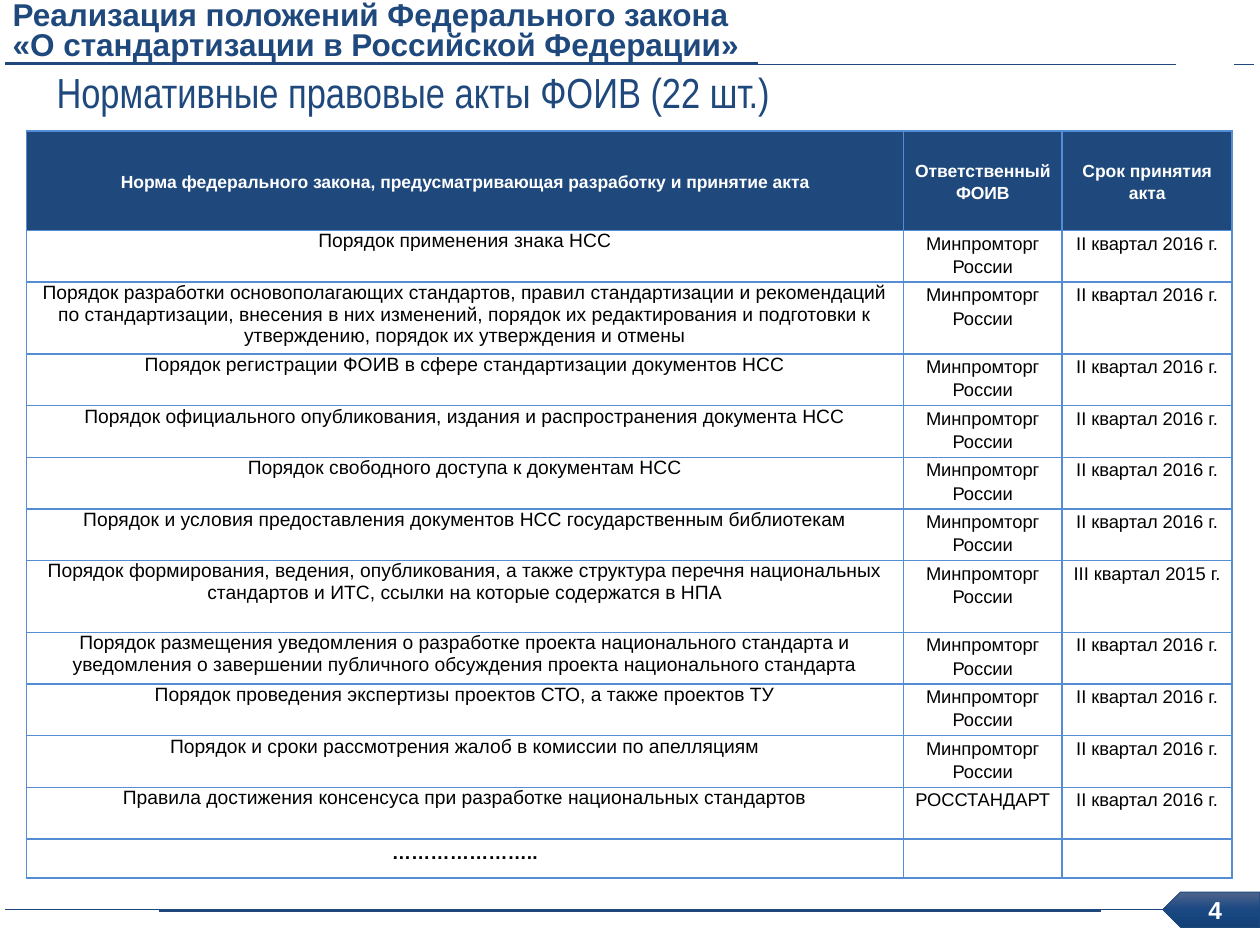
from copy import deepcopy

from pptx import Presentation
from pptx.dml.color import RGBColor
from pptx.enum.shapes import MSO_CONNECTOR, MSO_SHAPE
from pptx.enum.text import MSO_ANCHOR, MSO_AUTO_SIZE, PP_ALIGN
from pptx.oxml import parse_xml
from pptx.oxml.ns import nsdecls, qn
from pptx.oxml.xmlchemy import OxmlElement
from pptx.util import Inches, Pt

NAVY, GRID, WHITE, BLACK = "1F497D", "548DD4", "FFFFFF", "000000"
MINISTRY, QUARTER = "Минпромторг России", "II квартал 2016 г."
COLUMNS = [6.96, 1.26, 1.35]
HEADER_ROW, SHORT_ROW, TALL_ROW, LAST_ROW = 0.79, 0.41, 0.57, 0.31

HEADINGS = ["Норма федерального закона, предусматривающая разработку и принятие акта",
            "Ответственный ФОИВ", "Срок принятия акта"]
# Acts: text, row height, and any owner or date that is not the usual one
ACTS = [
    ("Порядок применения знака НСС", SHORT_ROW),
    ("Порядок разработки основополагающих стандартов, правил стандартизации и рекомендаций "
     "по стандартизации, внесения в них изменений, порядок их редактирования и подготовки к "
     "утверждению, порядок их утверждения и отмены", TALL_ROW),
    ("Порядок регистрации ФОИВ в сфере стандартизации документов НСС", SHORT_ROW),
    ("Порядок официального опубликования, издания и распространения документа НСС", SHORT_ROW),
    ("Порядок свободного доступа к документам НСС", SHORT_ROW),
    ("Порядок и условия предоставления документов НСС государственным библиотекам", SHORT_ROW),
    ("Порядок формирования, ведения, опубликования, а также структура перечня национальных "
     "стандартов и ИТС, ссылки на которые содержатся в НПА", TALL_ROW,
     MINISTRY, "III квартал 2015 г."),
    ("Порядок размещения уведомления о разработке проекта национального стандарта и "
     "уведомления о завершении публичного обсуждения проекта национального стандарта", SHORT_ROW),
    ("Порядок проведения экспертизы проектов СТО, а также проектов ТУ", SHORT_ROW),
    ("Порядок и сроки рассмотрения жалоб в комиссии по апелляциям", SHORT_ROW),
    ("Правила достижения консенсуса при разработке национальных стандартов", SHORT_ROW,
     "РОССТАНДАРТ"),
    ("…………………..", LAST_ROW, "", ""),
]


def color(value):
    return RGBColor.from_string(value)


def set_font(paragraph, size, value, bold=False, name="Arial"):
    font = paragraph.font
    font.name, font.size, font.bold = name, Pt(size), bold
    font.color.rgb = color(value)


def place(shape, box):
    shape.left, shape.top, shape.width, shape.height = (Inches(length) for length in box)


def add_rule(slide, left, right, y, width):
    rule = slide.shapes.add_connector(MSO_CONNECTOR.STRAIGHT, Inches(left), Inches(y),
                                      Inches(right), Inches(y))
    rule.line.color.rgb = color(NAVY)
    rule.line.width = Pt(width)
    rule._element.spPr.append(OxmlElement("a:effectLst"))


def add_text(slide, box, text):
    shape = slide.shapes.add_textbox(*(Inches(length) for length in box))
    shape.text_frame.word_wrap = True
    shape.text_frame.text = text
    return shape.text_frame


def add_header(slide, box):
    left, top, width, height = box
    bottom = top + height
    add_rule(slide, left + 0.04, left + 9.33, bottom, 0.5)
    add_rule(slide, left + 0.04, left + 6.02, bottom - 0.01, 1.5)
    add_rule(slide, left + 9.79, left + 9.95, bottom, 0.5)
    title = slide.shapes.title
    place(title, box)
    frame = title.text_frame
    frame.text = "Реализация положений Федерального закона\v«О стандартизации в Российской Федерации»"
    frame.vertical_anchor = MSO_ANCHOR.MIDDLE
    frame.auto_size = MSO_AUTO_SIZE.NONE
    paragraph = frame.paragraphs[0]
    paragraph.alignment = PP_ALIGN.LEFT
    paragraph.line_spacing = 0.8
    set_font(paragraph, 18, NAVY, bold=True)


def add_subtitle(slide, box):
    frame = add_text(slide, box, "Нормативные правовые акты ФОИВ (22 шт.)")
    frame.auto_size = MSO_AUTO_SIZE.SHAPE_TO_FIT_TEXT
    set_font(frame.paragraphs[0], 24, NAVY, name="Arial Narrow")


def add_borders(cell):
    properties = cell._tc.get_or_add_tcPr()
    for index, side in enumerate(("lnL", "lnR", "lnT", "lnB")):
        properties.insert(index, parse_xml(
            f'<a:{side} {nsdecls("a")} w="12700"><a:solidFill><a:srgbClr val="{GRID}"/>'
            f'</a:solidFill></a:{side}>'))


def fill_cell(cell, text, size, value=BLACK, bold=False, spacing=1.15, after=10, fill=None):
    cell.margin_left = cell.margin_right = Inches(0.04)
    cell.margin_top = cell.margin_bottom = 0
    cell.text = text
    paragraph = cell.text_frame.paragraphs[0]
    paragraph.alignment = PP_ALIGN.CENTER
    paragraph.line_spacing = spacing
    paragraph.space_after = Pt(after)
    set_font(paragraph, size, value, bold)
    if fill:
        cell.fill.solid()
        cell.fill.fore_color.rgb = color(fill)
    else:
        cell.fill.background()
    add_borders(cell)


def add_acts_table(slide, box):
    table = slide.shapes.add_table(len(ACTS) + 1, len(COLUMNS),
                                   *(Inches(length) for length in box)).table
    table.horz_banding = False
    for column, width in zip(table.columns, COLUMNS):
        column.width = Inches(width)
    # Heading row
    table.rows[0].height = Inches(HEADER_ROW)
    for cell, heading in zip(table.rows[0].cells, HEADINGS):
        fill_cell(cell, heading, 10, WHITE, bold=True, fill=NAVY)
        cell.vertical_anchor = MSO_ANCHOR.MIDDLE
    # One row for each act
    for row, (act, height, *details) in enumerate(ACTS, start=1):
        table.rows[row].height = Inches(height)
        is_last = row == len(ACTS)
        fill_cell(table.cell(row, 0), act, 11, bold=is_last,
                  spacing=1.15 if is_last else 1.0, after=0)
        usual = [MINISTRY, QUARTER]
        for column, text in enumerate(details + usual[len(details):], start=1):
            fill_cell(table.cell(row, column), text, 10.5, after=10 if text else 0)


def add_footer(slide, box):
    left, top, width, height = box
    middle = top + height / 2
    add_rule(slide, left + 0.04, left + 9.96, middle, 0.5)
    add_rule(slide, left + 1.26, left + 8.74, middle + 0.01, 1.5)
    # Arrow tab with the page number
    tab = (left + width - 0.77, top, 0.77, height)
    arrow = slide.shapes.add_shape(MSO_SHAPE.PENTAGON, *(Inches(length) for length in tab))
    arrow.shadow.inherit = False
    arrow._element.spPr.find(qn("a:xfrm")).set("flipH", "1")
    arrow.line.color.rgb = color(NAVY)
    arrow.line.width = Pt(0.5)
    arrow.fill.gradient()
    arrow.fill.gradient_angle = 270
    stop_list = arrow._element.spPr.find(qn("a:gradFill")).find(qn("a:gsLst"))
    stop_list.append(deepcopy(stop_list[-1]))
    shades = [(0, "4F648D"), (0.5, "1A4882"), (1, "134077")]
    for stop, (position, value) in zip(arrow.fill.gradient_stops, shades):
        stop.position = position
        stop.color.rgb = color(value)
    frame = add_text(slide, tab, "4")
    frame.margin_right = Inches(0.04)
    frame.vertical_anchor = MSO_ANCHOR.MIDDLE
    frame.paragraphs[0].alignment = PP_ALIGN.CENTER
    set_font(frame.paragraphs[0], 14, WHITE, bold=True)


def main():
    presentation = Presentation()
    presentation.slide_width, presentation.slide_height = Inches(10), Inches(7.5)
    slide = presentation.slides.add_slide(presentation.slide_layouts[5])
    add_header(slide, (0, 0, 9.96, 0.51))
    add_subtitle(slide, (0.35, 0.48, 6.09, 0.5))
    add_acts_table(slide, (0.21, 1.04, 9.57, 5.94))
    add_footer(slide, (0, 7.08, 10, 0.28))
    presentation.save("out.pptx")


if __name__ == "__main__":
    main()
